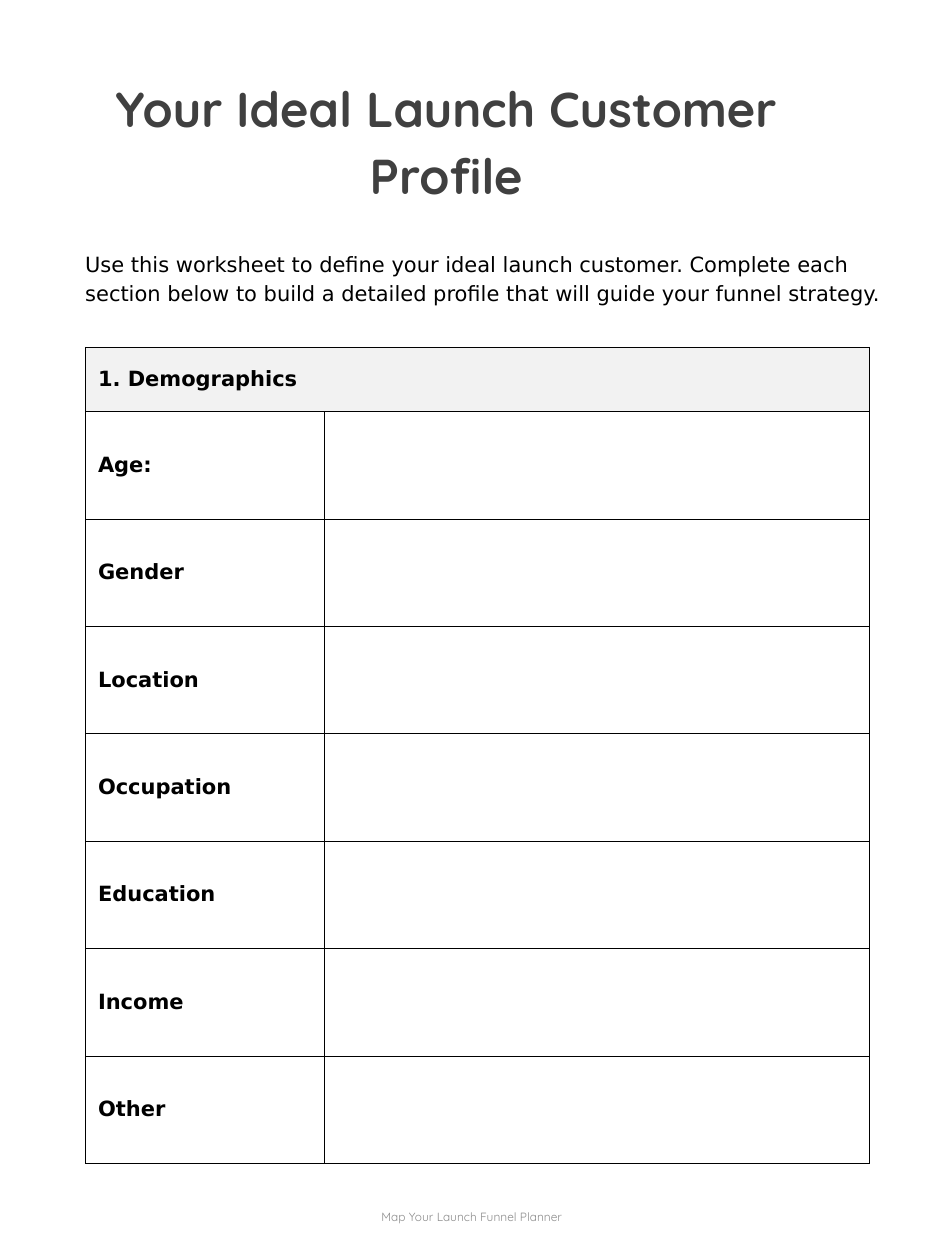
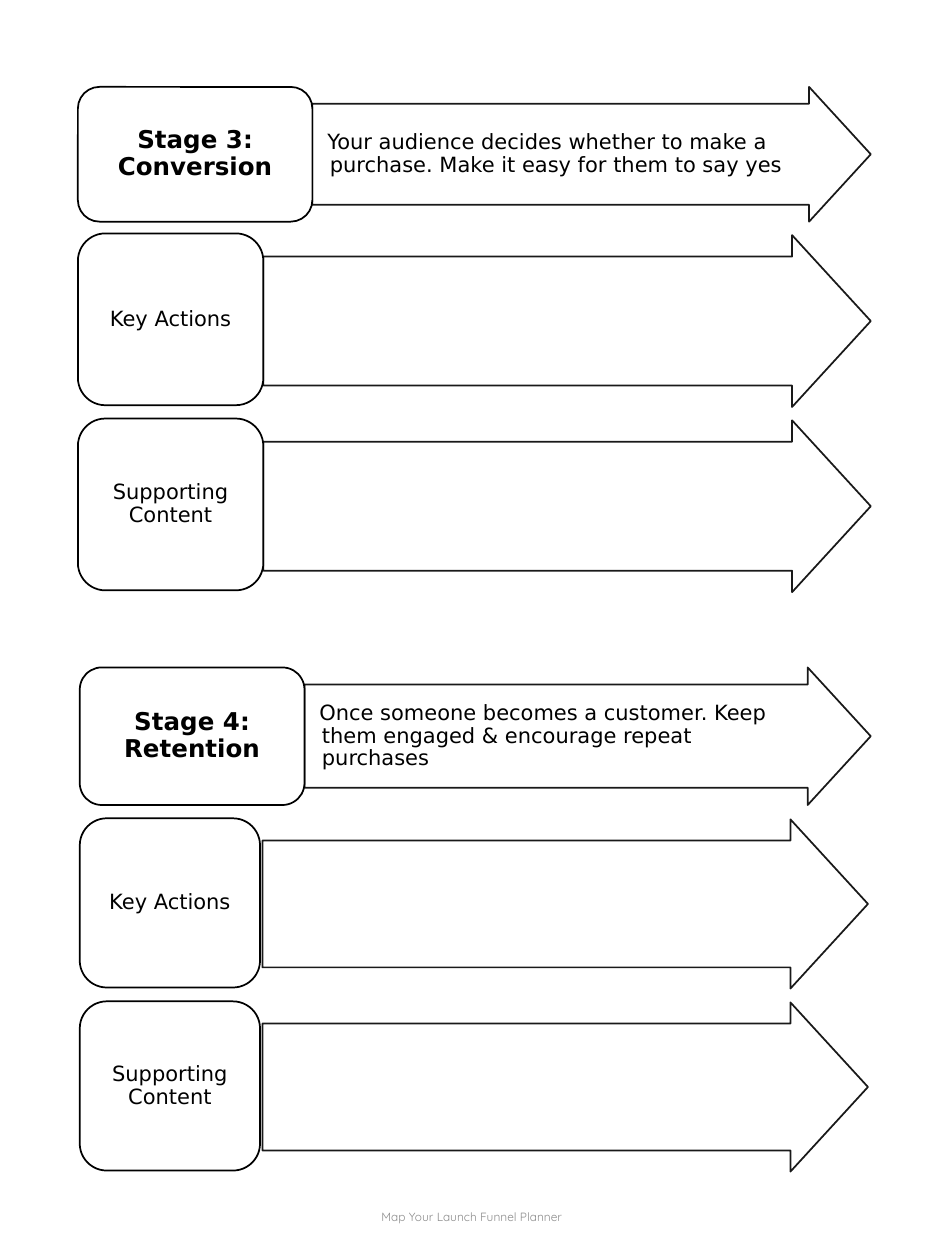
"""Build two pages of a launch funnel planner."""
from dataclasses import dataclass

from lxml.etree import SubElement
from pptx import Presentation
from pptx.dml.color import RGBColor
from pptx.enum.shapes import MSO_SHAPE as Preset
from pptx.enum.text import MSO_ANCHOR as Anchor, PP_ALIGN as Align
from pptx.oxml.ns import qn
from pptx.util import Pt

BLACK = RGBColor(0x00, 0x00, 0x00)
WHITE = RGBColor(0xFF, 0xFF, 0xFF)
TITLE_GREY = RGBColor(0x40, 0x40, 0x40)
FOOTER_GREY = RGBColor(0x8C, 0x8C, 0x8C)
BAND_GREY = RGBColor(0xF2, 0xF2, 0xF2)
BODY_FONT = "DejaVu Sans"
DISPLAY_FONT = "Quicksand"
FIELDS = ("Age:", "Gender", "Location", "Occupation", "Education", "Income", "Other")
ACTIVITIES = ("Key Actions", "Supporting Content")


@dataclass(frozen=True)
class TextStyle:
    """Look of one run and its paragraph."""

    size: float
    font: str = BODY_FONT
    color: RGBColor = BLACK
    bold: bool = False
    align: Align = Align.LEFT
    spacing: float = 1.0
    after: float = 0


TITLE = TextStyle(28, DISPLAY_FONT, TITLE_GREY, True, Align.CENTER, 1.14, 6)
INTRO = TextStyle(12, spacing=1.15, after=12)
FOOTER = TextStyle(6.8, DISPLAY_FONT, FOOTER_GREY, align=Align.CENTER)
FIELD = TextStyle(12, bold=True)
STAGE_NAME = TextStyle(14, bold=True, align=Align.CENTER, spacing=0.9)
ACTIVITY = TextStyle(12, align=Align.CENTER, spacing=0.9)
STAGE_NOTE = TextStyle(12, spacing=0.9)


@dataclass(frozen=True)
class Box:
    """Place of a shape in points."""

    left: float
    top: float
    width: float
    height: float

    def lengths(self) -> tuple:
        """Return the place as python-pptx lengths."""
        return Pt(self.left), Pt(self.top), Pt(self.width), Pt(self.height)


@dataclass(frozen=True)
class Stage:
    """One funnel stage with its activity rows."""

    name: str
    note: str
    left: float
    top: float
    height: float
    name_width: float
    tip: float
    activity_top: float
    activity_height: float
    activity_pitch: float
    activity_width: float
    activity_arrow: float
    activity_tip: float
    arrow_drop: float


STAGES = (
    Stage("Stage 3: Conversion",
          "Your audience decides whether to make a purchase. "
          "Make it easy for them to say yes",
          44.5, 49.7, 77, 134, 497.6, 133.4, 98.2, 105.8, 106, 150.5, 497.6, 1),
    Stage("Stage 4: Retention",
          "Once someone becomes a customer. Keep them engaged & "
          "encourage repeat purchases",
          45.6, 381.4, 78.6, 128.4, 497.6, 467.6, 96.7, 104.6, 103, 150, 496, 0.6),
)


def write(frame, text: str, style: TextStyle):
    """Write one styled run into a text frame and return its paragraph."""
    para = frame.paragraphs[0]
    para.alignment = style.align
    para.line_spacing = style.spacing
    para.space_after = Pt(style.after)
    span = para.add_run()
    span.text = text
    span.font.name = style.font
    span.font.size = Pt(style.size)
    span.font.bold = style.bold
    span.font.color.rgb = style.color
    return para


def set_insets(frame, left: float, right: float) -> None:
    """Set side insets, wrap and centre the text vertically."""
    frame.margin_left, frame.margin_right = Pt(left), Pt(right)
    frame.margin_top = frame.margin_bottom = 0
    frame.word_wrap = True
    frame.vertical_anchor = Anchor.MIDDLE


def add_text(page, box: Box, text: str, style: TextStyle, anchor=Anchor.TOP) -> None:
    """Add a wrapped text box."""
    frame = page.shapes.add_textbox(*box.lengths()).text_frame
    frame.word_wrap = True
    frame.vertical_anchor = anchor
    write(frame, text, style)


def add_outlined(group, preset: Preset, box: Box, *adjustments: float):
    """Add a white shape with a thin black outline."""
    shape = group.shapes.add_shape(preset, *box.lengths())
    for index, value in enumerate(adjustments):
        shape.adjustments[index] = value
    shape.shadow.inherit = False
    shape.fill.solid()
    shape.fill.fore_color.rgb = WHITE
    shape.line.color.rgb = BLACK
    shape.line.width = Pt(1)
    return shape


def add_label(group, box: Box, text: str, style: TextStyle) -> None:
    """Add a rounded label."""
    label = add_outlined(group, Preset.ROUNDED_RECTANGLE, box, 0.16)
    set_insets(label.text_frame, 4, 4)
    write(label.text_frame, text, style)


def add_arrow(group, box: Box, note: str = "") -> None:
    """Add a slightly transparent block arrow with an optional note."""
    arrow = add_outlined(group, Preset.RIGHT_ARROW, box, 0.75, 0.458)
    for color in arrow.element.spPr.iter(qn("a:srgbClr")):
        SubElement(color, qn("a:alpha"), val="90000")
    if note:
        set_insets(arrow.text_frame, 1, 22)
        para = write(arrow.text_frame, note, STAGE_NOTE)
        properties = para._p.get_or_add_pPr()
        properties.set("marL", str(Pt(9)))
        properties.set("indent", str(Pt(-1.5)))


def add_stage(page, stage: Stage) -> None:
    """Draw a stage heading and its activity rows as one group."""
    group = page.shapes.add_group_shape()
    start = stage.left + stage.name_width
    add_arrow(group, Box(start, stage.top, stage.tip - start, stage.height), stage.note)
    add_label(group, Box(stage.left, stage.top, stage.name_width, stage.height),
              stage.name, STAGE_NAME)
    for index, activity in enumerate(ACTIVITIES):
        top = stage.activity_top + index * stage.activity_pitch
        add_arrow(group, Box(stage.activity_arrow, top + stage.arrow_drop,
                             stage.activity_tip - stage.activity_arrow,
                             stage.activity_height))
        add_label(group, Box(stage.left, top, stage.activity_width, stage.activity_height),
                  activity, ACTIVITY)


def format_cell(cell, fill: RGBColor | None = None) -> None:
    """Give a cell thin black borders and a fill, if any."""
    cell.vertical_anchor = Anchor.MIDDLE
    properties = cell._tc.get_or_add_tcPr()
    for side in ("lnL", "lnR", "lnT", "lnB"):
        line = SubElement(properties, qn(f"a:{side}"), w=str(Pt(0.25)))
        solid = SubElement(line, qn("a:solidFill"))
        SubElement(solid, qn("a:srgbClr"), val=str(BLACK))
    if fill is None:
        cell.fill.background()
    else:
        cell.fill.solid()
        cell.fill.fore_color.rgb = fill


def add_demographics(page, box: Box) -> None:
    """Add the demographics form."""
    table = page.shapes.add_table(len(FIELDS) + 1, 2, *box.lengths()).table
    table.first_row = table.horz_banding = False
    for column, width in zip(table.columns, (136.6, box.width - 136.6)):
        column.width = Pt(width)
    header_height = 36.6
    for index, row in enumerate(table.rows):
        field_height = (box.height - header_height) / len(FIELDS)
        row.height = Pt(field_height if index else header_height)
        for cell in row.cells:
            format_cell(cell, None if index else BAND_GREY)
    table.cell(0, 0).merge(table.cell(0, 1))
    for index, text in enumerate(("1. Demographics", *FIELDS)):
        write(table.cell(index, 0).text_frame, text, FIELD)


def add_page(deck):
    """Add a blank page with the shared footer."""
    page = deck.slides.add_slide(deck.slide_layouts[6])
    add_text(page, Box(178.6, 676, 182, 38), "Map Your Launch Funnel Planner",
             FOOTER, Anchor.MIDDLE)
    return page


def build_profile(deck) -> None:
    """Build the customer profile worksheet."""
    page = add_page(deck)
    title = page.shapes.add_shape(Preset.RECTANGLE, *Box(13.7, 36.7, 482.4, 81.4).lengths())
    title.shadow.inherit = False
    title.fill.solid()
    title.fill.fore_color.rgb = WHITE
    title.line.fill.background()
    title.text_frame.word_wrap = True
    title.text_frame.vertical_anchor = Anchor.TOP
    write(title.text_frame, "Your Ideal Launch Customer Profile", TITLE)
    add_text(page, Box(41.6, 138.2, 475.2, 39),
             "Use this worksheet to define your ideal launch customer. Complete each "
             "section below to build a detailed profile that will guide your funnel "
             "strategy.", INTRO)
    add_demographics(page, Box(48.8, 198.4, 448, 466.4))


def build_stages(deck) -> None:
    """Build the funnel stages page."""
    page = add_page(deck)
    for stage in STAGES:
        add_stage(page, stage)


def main() -> None:
    """Build and save the deck."""
    deck = Presentation()
    deck.slide_width, deck.slide_height = Pt(540), Pt(720)
    build_profile(deck)
    build_stages(deck)
    deck.save("out.pptx")


if __name__ == "__main__":
    main()
